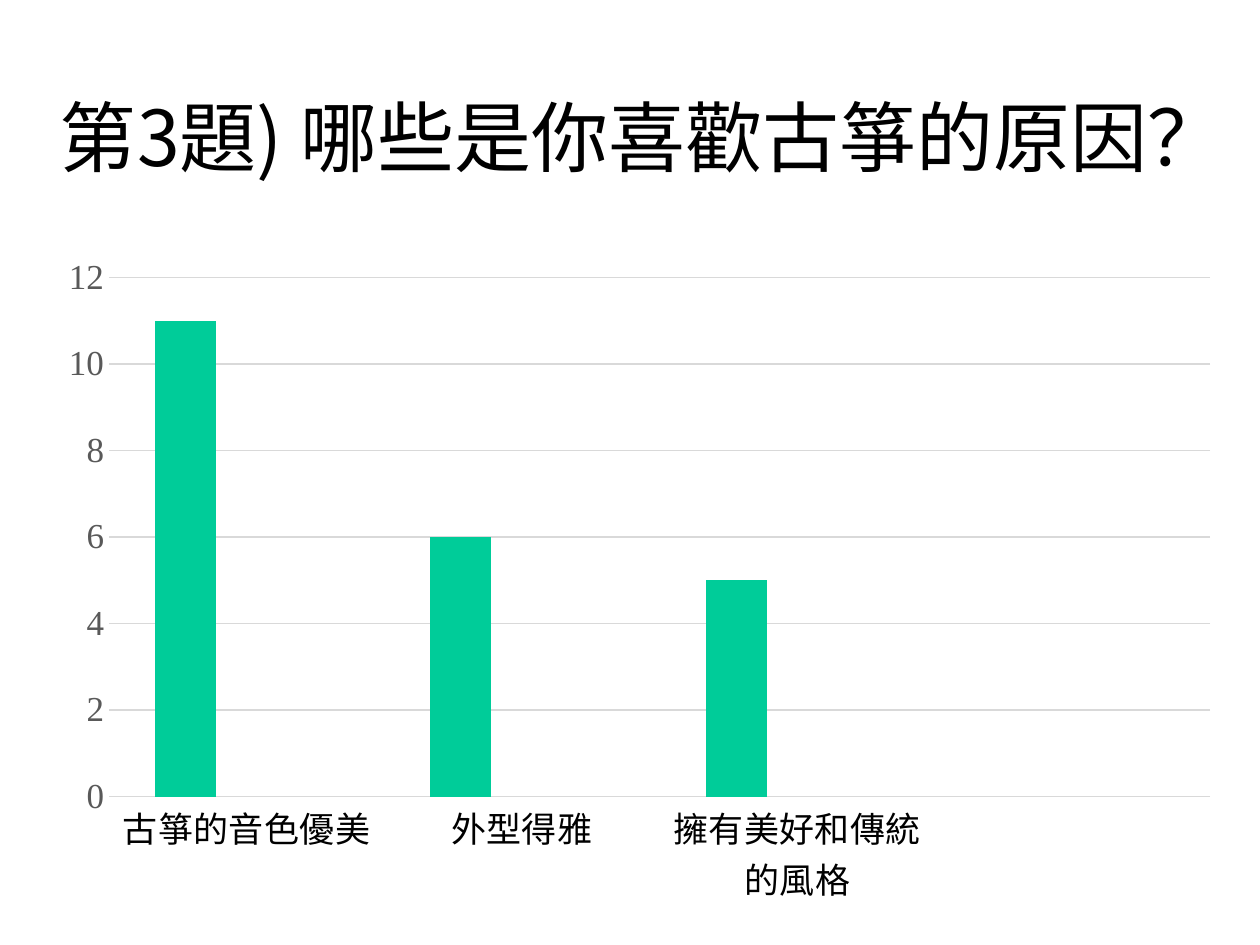
from pptx import Presentation
from pptx.chart.data import CategoryChartData
from pptx.dml.color import RGBColor
from pptx.enum.chart import XL_CHART_TYPE as ChartType, XL_TICK_MARK as Tick
from pptx.enum.text import MSO_ANCHOR as Anchor, PP_ALIGN as Align
from pptx.oxml import parse_xml
from pptx.oxml.ns import nsdecls, qn
from pptx.util import Pt

EMU_PER_PX = 914400 / 126


def px(length):
    return round(length * EMU_PER_PX)


def color(code):
    return RGBColor.from_string(code)


def apply(target, formats):
    for name, value in formats.items():
        setattr(target, name, value)


class SurveySlide:
    """Style of the survey and the slide being filled."""
    CJK = "Noto Sans CJK SC"
    LATIN = "Times New Roman"
    INK, GRAY, GRID = "000000", "595959", "D9D9D9"

    def __init__(self, deck):
        self.slide = deck.slides.add_slide(deck.slide_layouts[5])

    def style_font(self, font, size, code, name):
        apply(font, {"size": Pt(size), "name": name, "bold": False})
        font.color.rgb = color(code)

    def title(self, text, box):
        heading = self.slide.shapes.title
        apply(heading, dict(zip(("left", "top", "width", "height"), map(px, box))))
        frame = heading.text_frame
        frame.text = text
        apply(frame, {"vertical_anchor": Anchor.MIDDLE, "word_wrap": True})
        line = frame.paragraphs[0]
        line.alignment = Align.CENTER
        run = line.runs[0]
        self.style_font(run.font, 44, self.INK, self.CJK)
        # East Asian glyphs take their own typeface
        latin = run.font._element.find(qn("a:latin"))
        latin.addnext(parse_xml(f'<a:ea {nsdecls("a")} typeface="{self.CJK}"/>'))

    def columns(self, reasons, series, box, plot_box):
        votes = CategoryChartData()
        votes.categories = reasons
        for name, values, _ in series:
            votes.add_series(name, values)
        chart = self.slide.shapes.add_chart(
            ChartType.COLUMN_CLUSTERED, *map(px, box), votes).chart
        apply(chart, {"has_legend": False, "has_title": False})
        self.style_font(chart.font, 10, self.INK, self.LATIN)

        # Bars
        plot = chart.plots[0]
        apply(plot, {"gap_width": 150, "overlap": 0, "vary_by_categories": False})
        for bars, (_, _, code) in zip(plot.series, series):
            bars.format.fill.solid()
            bars.format.fill.fore_color.rgb = color(code)

        # Axes and gridlines
        for axis, code in ((chart.category_axis, self.INK),
                           (chart.value_axis, self.GRAY)):
            apply(axis, {"major_tick_mark": Tick.NONE, "minor_tick_mark": Tick.NONE})
            axis.format.line.fill.background()
            self.style_font(axis.tick_labels.font, 20, code, self.LATIN)
        scale = chart.value_axis
        apply(scale, {"minimum_scale": 0, "maximum_scale": 12, "major_unit": 2})
        grid = scale.major_gridlines.format.line
        grid.width = Pt(0.75)
        grid.color.rgb = color(self.GRID)

        # Fixed plot area inside the chart
        parts = "".join(f'<c:{tag} val="{share}"/>'
                        for tag, share in zip("xywh", plot_box))
        area = chart._chartSpace.chart.plotArea
        for layout in area.findall(qn("c:layout")):
            area.remove(layout)
        area.insert(0, parse_xml(
            f'<c:layout {nsdecls("c")}><c:manualLayout><c:layoutTarget val="inner"/>'
            '<c:xMode val="edge"/><c:yMode val="edge"/>'
            f'{parts}</c:manualLayout></c:layout>'))


def main():
    deck = Presentation()
    apply(deck, {"slide_width": px(1260), "slide_height": px(945)})
    survey = SurveySlide(deck)

    # Question
    survey.title("第3題) 哪些是你喜歡古箏的原因？", (0, 57, 1285, 157))

    # Votes per reason, with a free fourth place
    reasons = ["古箏的音色優美", "外型得雅", "擁有美好和傳統的風格", ""]
    unused = [None] * len(reasons)
    survey.columns(
        reasons,
        [("Series 1", [11, 6, 5, None], "00CC99"),
         ("Series 2", unused, "3333CC"),
         ("Series 3", unused, "FFFFFF")],
        (50, 244, 1184, 674), (0.05, 0.05, 0.93, 0.77))

    deck.save("out.pptx")


if __name__ == "__main__":
    main()
